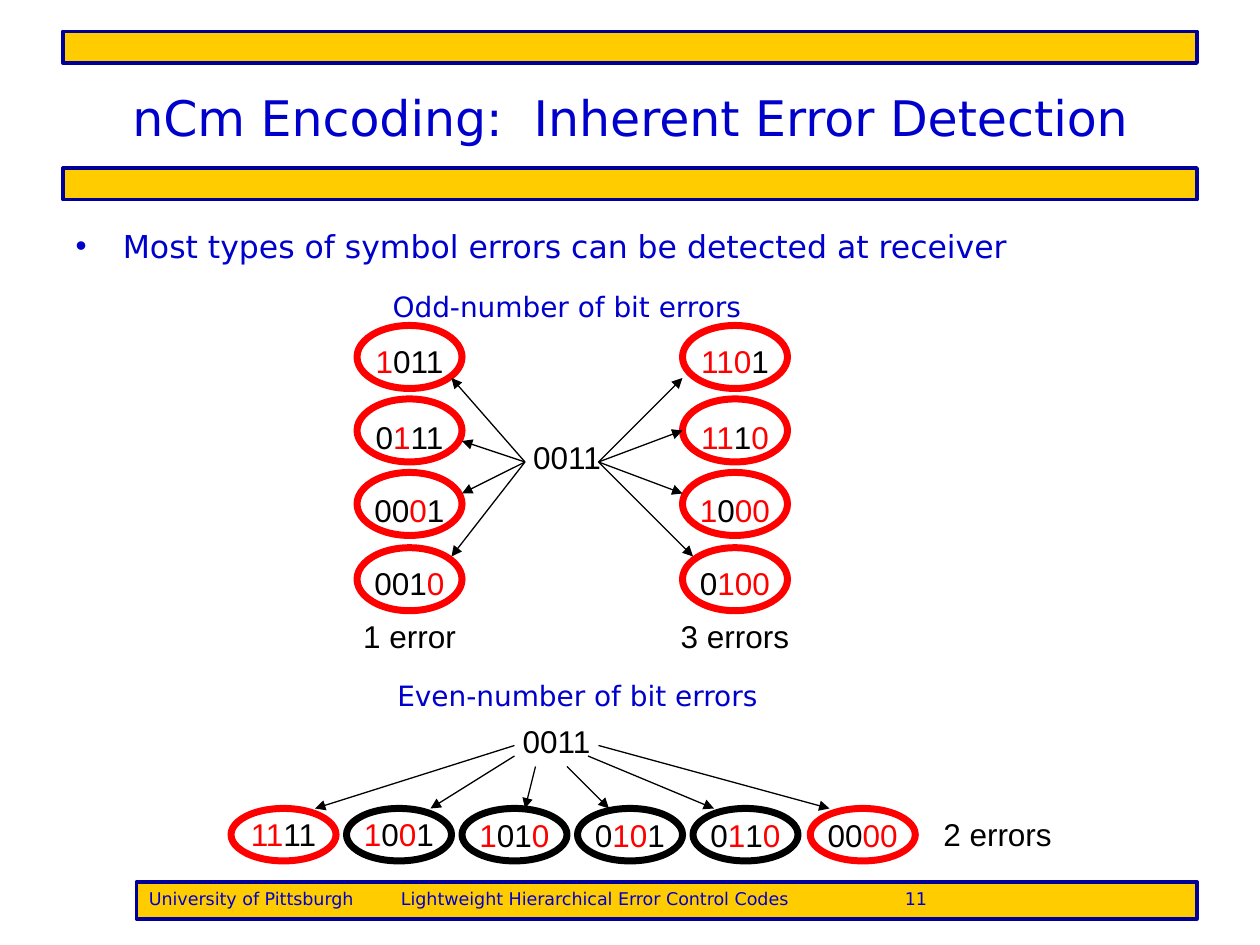
from itertools import groupby

from lxml import etree
from pptx import Presentation
from pptx.dml.color import RGBColor
from pptx.enum import shapes, text
from pptx.oxml.ns import qn
from pptx.util import Pt

BLUE = RGBColor(0x00, 0x00, 0xCC)
NAVY = RGBColor(0x00, 0x00, 0x99)
GOLD = RGBColor(0xFF, 0xCC, 0x00)
RED = RGBColor(0xFF, 0x00, 0x00)
BLACK = RGBColor(0x00, 0x00, 0x00)
SANS = "DejaVu Sans"
ARIAL = "Arial"

SENT = "0011"
OVAL_W = 60
CODE_W = 72
LABEL_H = 28.8

# Left edge, received words, arrow start and arrow ends of each odd column
ODD_COLUMNS = [
    (204, ["1011", "0111", "0001", "0010"], (300, 264),
     [(258, 216), (264, 252), (264, 282), (258, 318)]),
    (390, ["1101", "1110", "1000", "0100"], (342, 264),
     [(390, 216), (390, 246), (390, 282), (396, 318)]),
]
ODD_ROWS = [(186, 192), (228, 235.4), (270, 277.2), (313, 319)]  # oval, word

# Word, oval colour, oval left, word top, arrow start, arrow end x
EVEN_TOP = 462
EVEN_WORDS = [
    ("1111", RED, 132, 462, (294, 426), 180),
    ("1001", BLACK, 198, 462, (294, 432), 246),
    ("1010", BLACK, 264, 463, (306, 438), 300),
    ("0101", BLACK, 330, 463, (324, 438), 348),
    ("0110", BLACK, 396, 463, (336, 432), 408),
    ("0000", RED, 463, 463, (342, 426), 474),
]


def place(sp, x, y, w, h):
    sp.left, sp.top, sp.width, sp.height = Pt(x), Pt(y), Pt(w), Pt(h)


def style(font, name, size, color):
    font.name, font.size, font.color.rgb = name, Pt(size), color


def fill_placeholder(sp, box, content, size):
    place(sp, *box)
    tf = sp.text_frame
    tf.text = content
    tf.auto_size = text.MSO_AUTO_SIZE.NONE
    p = tf.paragraphs[0]
    p.space_before = Pt(0)
    style(p.runs[0].font, SANS, size, BLUE)
    return tf


def add_bar(s, x, y, w, h):
    sp = s.shapes.add_shape(shapes.MSO_SHAPE.RECTANGLE, Pt(x), Pt(y), Pt(w), Pt(h))
    sp.shadow.inherit = False
    sp.fill.solid()
    sp.fill.fore_color.rgb = GOLD
    sp.line.color.rgb = NAVY
    sp.line.width = Pt(2.25)
    return sp


def add_footer(s, content, tab_stops):
    tf = add_bar(s, 78, 504, 606, 21).text_frame
    tf.text = content
    tf.vertical_anchor = text.MSO_ANCHOR.TOP
    p = tf.paragraphs[0]
    p.alignment = text.PP_ALIGN.LEFT
    tabs = etree.SubElement(p._p.get_or_add_pPr(), qn("a:tabLst"))
    for stop in tab_stops:
        etree.SubElement(tabs, qn("a:tab"), pos=str(Pt(stop)), algn="l")
    style(p.runs[0].font, SANS, 10, BLUE)


def add_label(s, x, y, w, h, runs, name=ARIAL, size=18):
    """Add a centred one-line text box; runs is a list of (text, colour)."""
    tf = s.shapes.add_textbox(Pt(x), Pt(y), Pt(w), Pt(h)).text_frame
    tf.word_wrap = True
    p = tf.paragraphs[0]
    p.alignment = text.PP_ALIGN.CENTER
    for content, color in runs:
        r = p.add_run()
        r.text = content
        style(r.font, name, size, color)


def add_word(s, x, y, word):
    """Add a code word whose bits that differ from SENT are red."""
    pairs = groupby(zip(word, SENT), key=lambda bits: bits[0] != bits[1])
    runs = [("".join(bit for bit, _ in group), RED if wrong else BLACK)
            for wrong, group in pairs]
    add_label(s, x, y, CODE_W, LABEL_H, runs)


def add_oval(s, x, y, h, color):
    sp = s.shapes.add_shape(shapes.MSO_SHAPE.OVAL, Pt(x), Pt(y), Pt(OVAL_W), Pt(h))
    sp.shadow.inherit = False
    sp.fill.background()
    sp.line.color.rgb = color
    sp.line.width = Pt(4)


def add_arrow(s, start, end):
    cx = s.shapes.add_connector(shapes.MSO_CONNECTOR.STRAIGHT,
                                *(Pt(v) for v in (*start, *end)))
    cx.line.color.rgb = BLACK
    cx.line.width = Pt(0.75)
    etree.SubElement(cx.line._get_or_add_ln(), qn("a:tailEnd"), type="triangle")
    etree.SubElement(cx._element.spPr, qn("a:effectLst"))


def add_odd_errors(s):
    add_label(s, 192, 162, 264, 30, [("Odd-number of bit errors", BLUE)], SANS, 16)
    add_word(s, 288, 247, SENT)
    for x, words, start, ends in ODD_COLUMNS:
        for word, (oval_y, word_y), end in zip(words, ODD_ROWS, ends):
            add_word(s, x - 6, word_y, word)
            add_oval(s, x, oval_y, 36, RED)
            add_arrow(s, start, end)
    for x, caption in ((180, "1 error"), (366, "3 errors")):
        add_label(s, x, 349.2, 108, LABEL_H, [(caption, BLACK)])


def add_even_errors(s):
    add_label(s, 186, 384, 288, 36, [("Even-number of bit errors", BLUE)], SANS, 16)
    add_word(s, 282, 409, SENT)
    for word, color, x, word_y, start, end_x in EVEN_WORDS:
        add_word(s, x - 6, word_y, word)
        add_oval(s, x, EVEN_TOP, 30, color)
        add_arrow(s, start, (end_x, EVEN_TOP))
    add_label(s, 528, EVEN_TOP, 84, LABEL_H, [("2 errors", BLACK)])


def main():
    prs = Presentation()
    prs.slide_width, prs.slide_height = Pt(720), Pt(540)
    s = prs.slides.add_slide(prs.slide_layouts[1])
    title, body = s.placeholders
    tf = fill_placeholder(title, (36, 21.6, 648, 90),
                          "nCm Encoding:  Inherent Error Detection", 28)
    tf.vertical_anchor = text.MSO_ANCHOR.MIDDLE
    fill_placeholder(body, (36, 126, 648, 30),
                     "Most types of symbol errors can be detected at receiver", 18)
    for y in (18, 96):
        add_bar(s, 36, y, 648, 18)
    add_footer(s, "University of Pittsburgh\tLightweight Hierarchical Error "
                  "Control Codes\t11", (144, 432))
    add_odd_errors(s)
    add_even_errors(s)
    prs.save("out.pptx")


if __name__ == "__main__":
    main()
